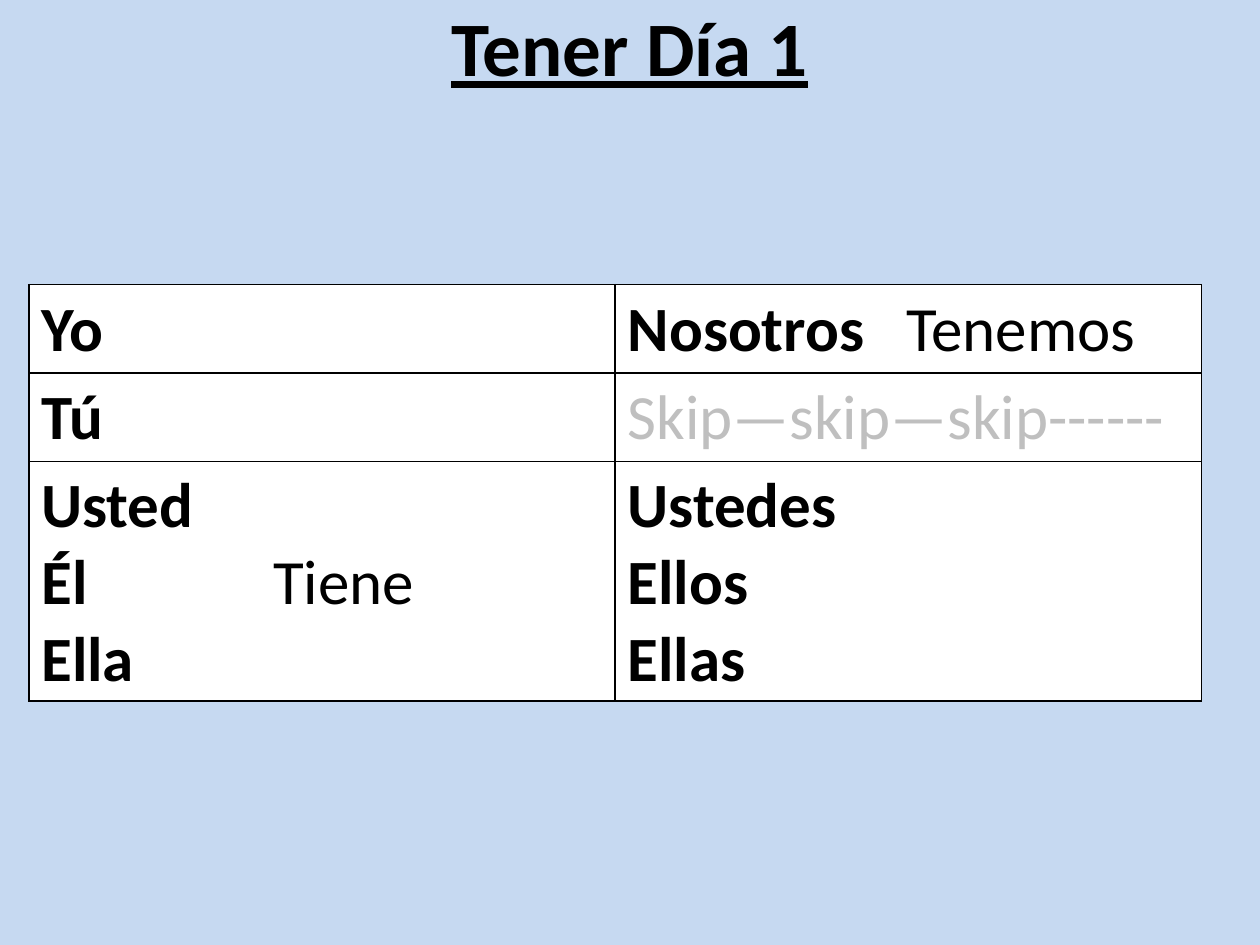
from dataclasses import dataclass
from typing import Optional

from lxml.etree import SubElement
from pptx import Presentation
from pptx.dml.color import RGBColor
from pptx.enum.text import MSO_ANCHOR as Anchor, PP_ALIGN as Align
from pptx.oxml.ns import qn
from pptx.util import Cm, Pt

COLORS = {"page": "C6D9F1", "cell": "FFFFFF", "ink": "000000", "skip": "BFBFBF"}
FONT = "Calibri"


@dataclass(frozen=True)
class Line:
    pronoun: str = ""
    verb: str = ""
    tab: Optional[float] = None
    color: str = "ink"


ROWS = [
    [[Line("Yo")], [Line("Nosotros", "Tenemos", 5.62)]],
    [[Line("Tú")], [Line(verb="Skip—skip—skip------", color="skip")]],
    [
        [Line("Usted"), Line("Él", "Tiene", 4.67), Line("Ella")],
        [Line("Ustedes"), Line("Ellos"), Line("Ellas")],
    ],
]
ROW_HEIGHTS = [1.78, 1.78, 4.83]
COLUMN_WIDTH = 11.82


def rgb(name: str) -> RGBColor:
    return RGBColor.from_string(COLORS[name])


def style_font(font, size: float, color: str) -> None:
    font.name = FONT
    font.size = Pt(size)
    font.color.rgb = rgb(color)


def add_title(page, text: str) -> None:
    box = page.shapes.add_textbox(Cm(0), Cm(-0.79), Cm(25.4), Cm(3.43))
    frame = box.text_frame
    frame.word_wrap = True
    frame.vertical_anchor = Anchor.MIDDLE
    para = frame.paragraphs[0]
    para.alignment = Align.CENTER
    para.add_run().text = text
    style_font(para.font, 44, "ink")
    para.font.bold = True
    para.font.underline = True


def add_line(para, line: Line) -> None:
    style_font(para.font, 36, line.color)
    if line.tab is not None:
        properties = para._p.get_or_add_pPr()
        stops = SubElement(properties, qn("a:tabLst"))
        SubElement(stops, qn("a:tab"), pos=str(Cm(line.tab)), algn="l")
        properties.insert(0, stops)
    pronoun = line.pronoun + ("\t" if line.tab is not None else "")
    for text, bold in ((pronoun, True), (line.verb, False)):
        if text:
            span = para.add_run()
            span.text = text
            span.font.bold = bold


def add_borders(cell) -> None:
    properties = cell._tc.get_or_add_tcPr()
    for index, side in enumerate(("lnL", "lnR", "lnT", "lnB")):
        border = SubElement(properties, qn(f"a:{side}"), w=str(Pt(1)))
        fill = SubElement(border, qn("a:solidFill"))
        SubElement(fill, qn("a:srgbClr"), val=COLORS["ink"])
        properties.insert(index, border)


def fill_cell(cell, lines: list[Line]) -> None:
    cell.fill.solid()
    cell.fill.fore_color.rgb = rgb("cell")
    add_borders(cell)
    frame = cell.text_frame
    for index, line in enumerate(lines):
        add_line(frame.add_paragraph() if index else frame.paragraphs[0], line)


def add_verb_table(page) -> None:
    columns = len(ROWS[0])
    table = page.shapes.add_table(
        len(ROWS), columns, Cm(0.58), Cm(5.74),
        Cm(COLUMN_WIDTH * columns), Cm(sum(ROW_HEIGHTS)),
    ).table
    table.first_row = False
    table.horz_banding = False
    for column in table.columns:
        column.width = Cm(COLUMN_WIDTH)
    for row, height, contents in zip(table.rows, ROW_HEIGHTS, ROWS):
        row.height = Cm(height)
        for cell, lines in zip(row.cells, contents):
            fill_cell(cell, lines)


def main() -> None:
    """Build the slide on the verb tener."""
    deck = Presentation()
    deck.slide_width, deck.slide_height = Cm(25.4), Cm(19.05)
    page = deck.slides.add_slide(deck.slide_layouts[6])
    page.background.fill.solid()
    page.background.fill.fore_color.rgb = rgb("page")
    add_title(page, "Tener Día 1")
    add_verb_table(page)
    deck.save("out.pptx")


if __name__ == "__main__":
    main()
